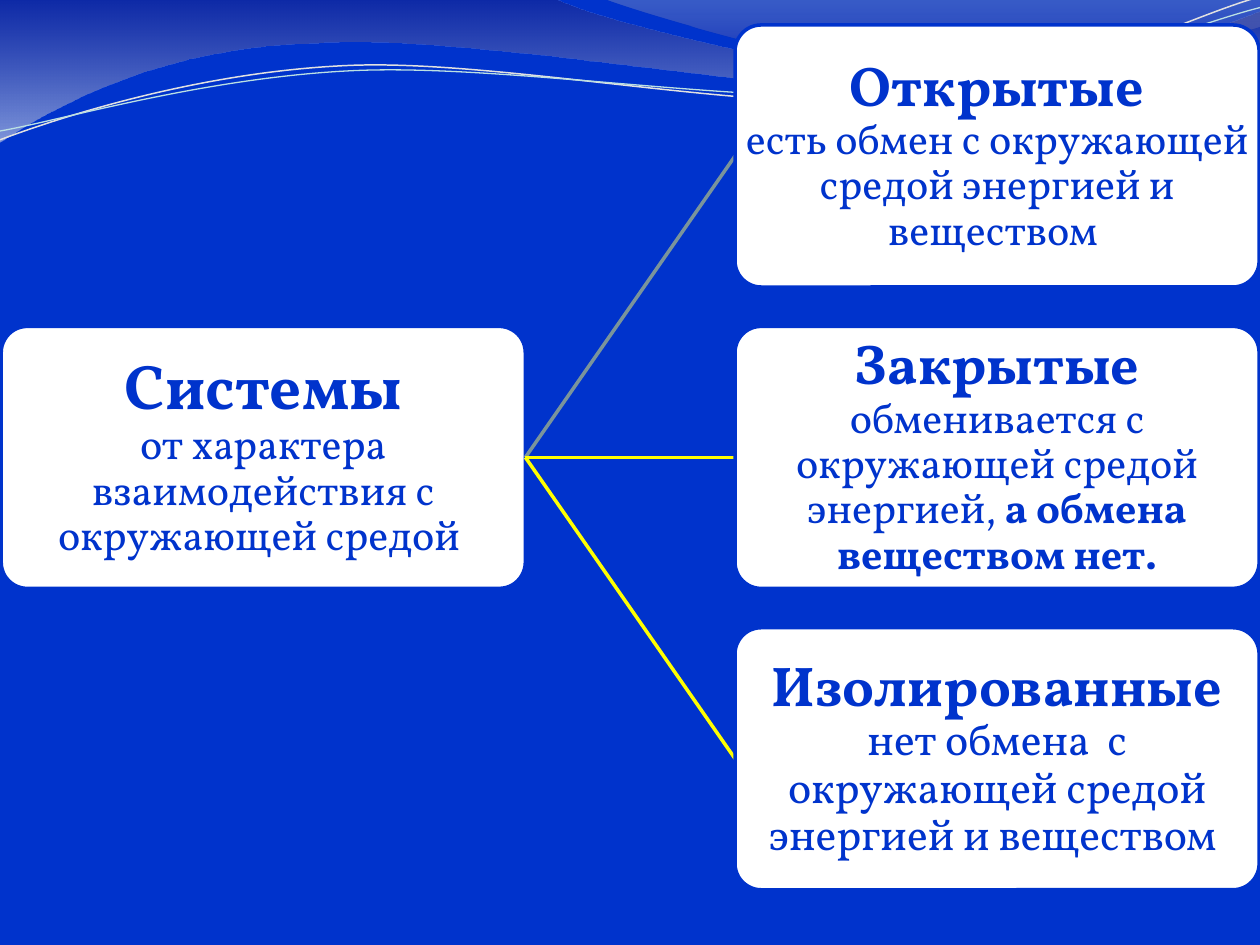
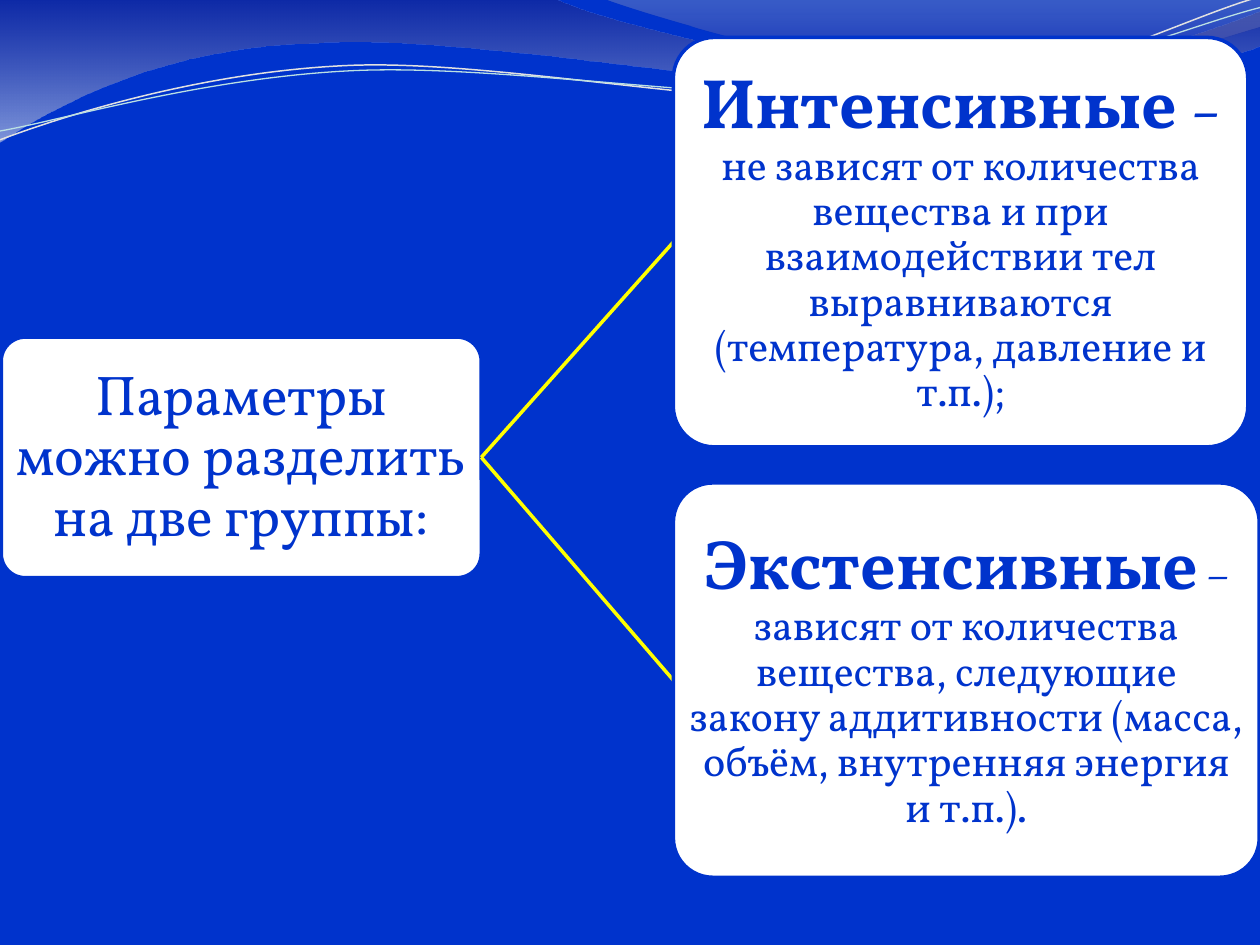
from dataclasses import dataclass
from typing import NamedTuple

from lxml import etree
from pptx import Presentation
from pptx.dml.color import RGBColor
from pptx.enum.shapes import MSO_CONNECTOR, MSO_SHAPE
from pptx.enum.text import MSO_ANCHOR, PP_ALIGN
from pptx.oxml.ns import qn
from pptx.util import Inches, Pt

STRAIGHT = MSO_CONNECTOR.STRAIGHT
ROUNDED = MSO_SHAPE.ROUNDED_RECTANGLE
MIDDLE = MSO_ANCHOR.MIDDLE
CENTER = PP_ALIGN.CENTER

SLIDE_WIDTH, SLIDE_HEIGHT = 10, 7.5
FONT = "Vollkorn"
BLUE, WHITE, YELLOW, PALE_YELLOW = "0033CC", "FFFFFF", "FFFF00", "FFFF66"

TREE_LEFT = 0.01
TREE_MIDDLE = 3.63
COLUMN_GAP = 0.4   # share of the root card's width
ROW_GAP = 0.15     # share of the root card's height
LEFT_SIDE, RIGHT_SIDE = 1, 3

Point = tuple[float, float]


class Stop(NamedTuple):
    position: float
    color: str
    opacity: int


class Span(NamedTuple):
    text: str
    size: float
    bold: bool = False


@dataclass(frozen=True)
class Wave:
    """Chains of cubic curves (anchor, control, control, anchor...), joined by lines."""
    chains: list[list[Point]]
    stops: tuple[Stop, ...] = ()
    line_color: str = ""
    line_width: float = 0


@dataclass(frozen=True)
class Card:
    width: float
    height: float
    paragraphs: list[list[Span]]
    inset: float = 0.02
    link_color: str = YELLOW
    link_opacity: int = 100


@dataclass(frozen=True)
class Tree:
    root: Card
    branches: list[Card]


WAVES = [
    Wave([[(0, 0)],
          [(4.4, -0.01), (4.76, 0.17), (6.64, 0.63), (7.58, 0.63),
           (8.53, 0.63), (9.58, 0.26), (10, 0.09)],
          [(10.01, 0.36), (9.83, 0.44), (8.7, 0.76), (7.46, 0.75),
           (6.22, 0.75), (3.82, 0.28), (2.57, 0.34),
           (1.29, 0.36), (0.46, 0.83), (-0.01, 1.13)],
          [(0, 0)]],
         stops=(Stop(0, "1E1E79", 45), Stop(1, "E7E7E7", 55))),
    Wave([[(4.79, -0.01), (5.09, 0.11), (6.82, 0.62), (7.69, 0.65),
           (8.56, 0.69), (9.61, 0.32), (10, 0.21)],
          [(10, 0)],
          [(4.79, -0.01)]],
         stops=(Stop(0, "BDBDBD", 30), Stop(0.8, "1B1B99", 45))),
    Wave([[(0, 1.11), (0.48, 0.93), (1.58, 0.57), (2.77, 0.52),
           (3.95, 0.47), (5.93, 0.89), (7.13, 0.8),
           (8.33, 0.71), (9.38, 0.15), (9.98, -0.02)]],
         line_color="E1E1E1", line_width=0.85),
    Wave([[(0, 1.04), (0.47, 0.96), (1.64, 0.61), (2.83, 0.56),
           (4.03, 0.51), (5.97, 0.84), (7.17, 0.75),
           (8.36, 0.67), (9.41, 0.21), (10, 0.06)]],
         line_color="BBE0E3", line_width=0.75),
]

SYSTEM_SIZE = (4.16, 2.08)
SYSTEMS = Tree(
    Card(*SYSTEM_SIZE, [
        [Span("Системы", 36, True)],
        [Span("от характера взаимодействия с окружающей средой ", 24)],
    ], inset=0.03),
    [
        Card(*SYSTEM_SIZE, [
            [Span("Открытые", 32, True)],
            [Span("есть обмен с окружающей средой энергией и веществом ", 24)],
        ], link_color=PALE_YELLOW, link_opacity=47),
        Card(*SYSTEM_SIZE, [[
            Span("Закрытые ", 32, True),
            Span("обменивается с окружающей средой энергией, ", 24),
            Span("а обмена веществом нет.", 24, True),
        ]]),
        Card(*SYSTEM_SIZE, [
            [Span("Изолированные", 32, True)],
            [Span("нет обмена  с окружающей средой энергией и веществом ", 25)],
        ]),
    ])

PARAMETERS = Tree(
    Card(3.81, 1.91, [[Span("Параметры можно разделить на две группы:", 32)]]),
    [
        Card(4.56, 3.25, [[
            Span("Интенсивные ", 40, True),
            Span("–", 28, True),
            Span("не зависят от количества вещества и при взаимодействии тел "
                 "выравниваются (температура, давление и т.п.);", 24),
        ]], inset=0.03),
        Card(4.65, 3.13, [[
            Span("Экстенсивные", 40, True),
            Span(" – зависят от количества вещества, следующие закону "
                 "аддитивности (масса, объём, внутренняя энергия и т.п.).", 24),
        ]], inset=0.03),
    ])


def rgb(color: str) -> RGBColor:
    return RGBColor.from_string(color)


def set_opacities(shape, opacities: list[int]) -> None:
    """Give the shape's colours, in order, their opacity in percent."""
    colors = list(shape.element.spPr.iter(qn("a:srgbClr")))
    for color, opacity in zip(colors, opacities):
        etree.SubElement(color, qn("a:alpha")).set("val", str(opacity * 1000))


def bend(shape, chains: list[list[Point]]) -> None:
    """Turn each three segments that follow a chain's anchor into one cubic curve."""
    segments = list(shape.element.spPr.iter(qn("a:lnTo")))
    first = 0
    for chain in chains:
        for start in range(first, first + len(chain) - 1, 3):
            curve = etree.Element(qn("a:cubicBezTo"))
            segments[start].addprevious(curve)
            for segment in segments[start:start + 3]:
                curve.append(segment[0])
                segment.getparent().remove(segment)
        first += len(chain)


def draw_wave(slide, wave: Wave):
    points = [(Inches(x), Inches(y)) for chain in wave.chains for x, y in chain]
    builder = slide.shapes.build_freeform(*points[0])
    builder.add_line_segments(points[1:], close=bool(wave.stops))
    shape = builder.convert_to_shape()
    bend(shape, wave.chains)
    shape.shadow.inherit = False
    if wave.stops:
        shape.line.fill.background()
        shape.fill.gradient()
        shape.fill.gradient_angle = 270
        for target, stop in zip(shape.fill.gradient_stops, wave.stops):
            target.position = stop.position
            target.color.rgb = rgb(stop.color)
        set_opacities(shape, [stop.opacity for stop in wave.stops])
    else:
        shape.fill.background()
        shape.line.color.rgb = rgb(wave.line_color)
        shape.line.width = Pt(wave.line_width)
    return shape


def draw_card(slide, card: Card, left: float, top: float):
    box = slide.shapes.add_shape(ROUNDED, Inches(left), Inches(top),
                                 Inches(card.width), Inches(card.height))
    box.adjustments[0] = 0.1
    box.shadow.inherit = False
    box.fill.solid()
    box.fill.fore_color.rgb = rgb(WHITE)
    box.line.color.rgb = rgb(BLUE)
    box.line.width = Pt(2)
    frame = box.text_frame
    frame.word_wrap = True
    frame.vertical_anchor = MIDDLE
    frame.margin_left = frame.margin_right = Inches(card.inset)
    frame.margin_top = frame.margin_bottom = Inches(card.inset)
    for index, spans in enumerate(card.paragraphs):
        para = frame.add_paragraph() if index else frame.paragraphs[0]
        para.alignment = CENTER
        para.line_spacing = 0.9
        for span in spans:
            run = para.add_run()
            run.text = span.text
            run.font.name = FONT
            run.font.size = Pt(span.size)
            run.font.bold = span.bold
            run.font.color.rgb = rgb(BLUE)
    return box


def start_link(slide, root_box, card: Card):
    """Add a line at the root's right side; its end is joined later."""
    link = slide.shapes.add_connector(STRAIGHT, 0, 0, 0, 0)
    link.begin_connect(root_box, RIGHT_SIDE)
    link.line.color.rgb = rgb(card.link_color)
    link.line.width = Pt(2)
    if card.link_opacity < 100:
        set_opacities(link, [card.link_opacity])
    etree.SubElement(link.element.spPr, qn("a:effectLst"))
    return link


def draw_tree(slide, tree: Tree) -> None:
    """Draw the root card and, beside it, the branches stacked about its middle."""
    root = tree.root
    root_box = draw_card(slide, root, TREE_LEFT, TREE_MIDDLE - root.height / 2)
    gap = ROW_GAP * root.height
    stack = sum(card.height + gap for card in tree.branches) - gap
    left = TREE_LEFT + root.width * (1 + COLUMN_GAP)
    top = TREE_MIDDLE - stack / 2
    for card in tree.branches:
        link = start_link(slide, root_box, card)
        link.end_connect(draw_card(slide, card, left, top), LEFT_SIDE)
        top += card.height + gap


def dress_master(deck, slide) -> None:
    """Set the shared background; the waves are built on a slide and moved to the master."""
    master = deck.slide_master
    master.background.fill.solid()
    master.background.fill.fore_color.rgb = rgb(BLUE)
    for wave in WAVES:
        master.shapes.element.append(draw_wave(slide, wave).element)


def main() -> None:
    deck = Presentation()
    deck.slide_width, deck.slide_height = Inches(SLIDE_WIDTH), Inches(SLIDE_HEIGHT)
    trees = (SYSTEMS, PARAMETERS)
    slides = [deck.slides.add_slide(deck.slide_layouts[6]) for _ in trees]
    dress_master(deck, slides[0])
    for slide, tree in zip(slides, trees):
        draw_tree(slide, tree)
    deck.save("out.pptx")


if __name__ == "__main__":
    main()
